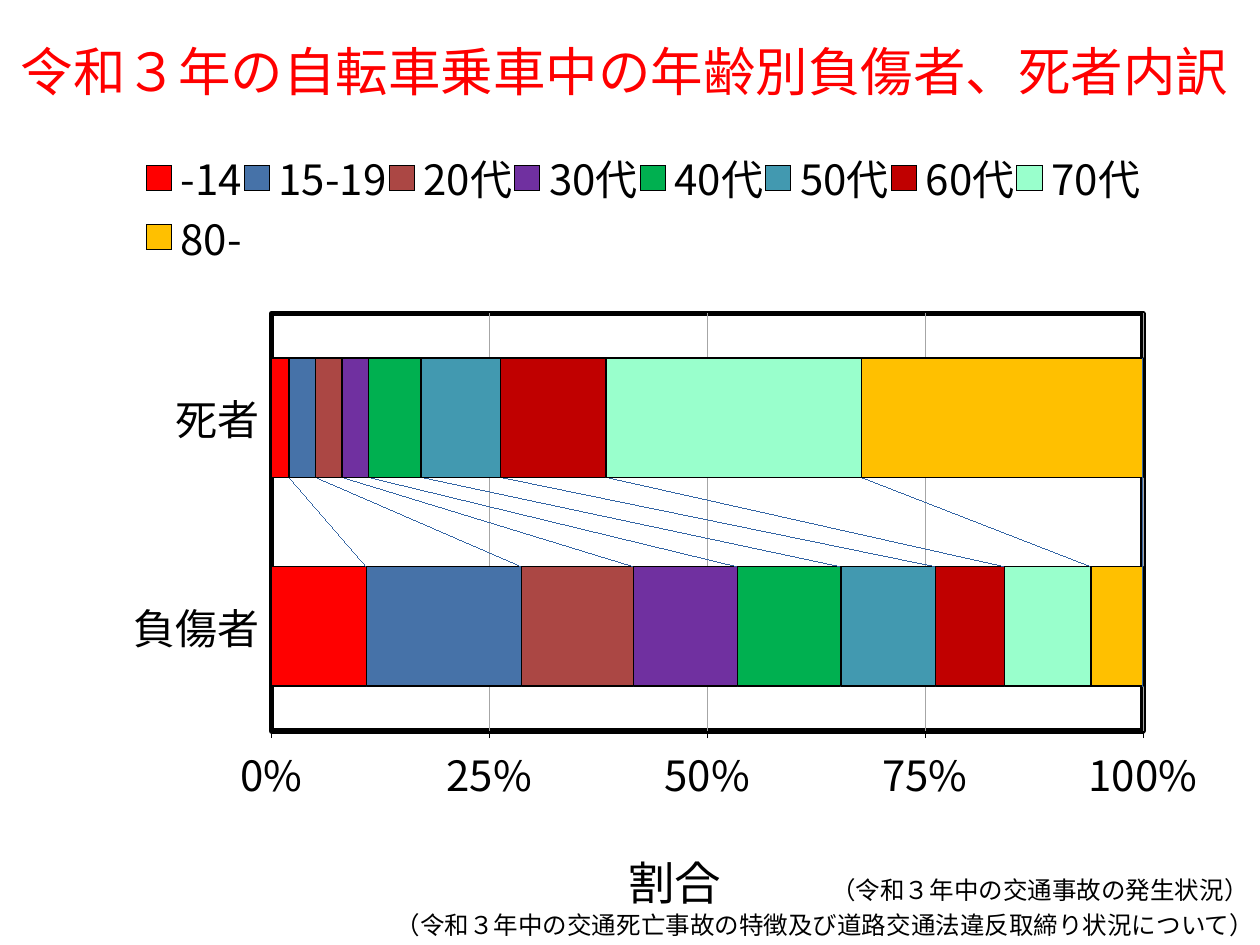
import pptx
import pptx.chart.data
import pptx.dml.color
import pptx.enum.chart
import pptx.enum.text
import pptx.oxml
import pptx.oxml.ns
import pptx.util
from dataclasses import dataclass
from lxml import etree

Pt = pptx.util.Pt
qn = pptx.oxml.ns.qn
NS = pptx.oxml.ns.nsdecls("c", "a")


@dataclass(frozen=True)
class Theme:
    font: str = "Noto Sans CJK JP"
    black: str = "000000"
    title: str = "FF0000"
    grid: str = "A6A6A6"
    link: str = "4672A8"
    title_size: float = 30
    axis_title_size: float = 26.6
    label_size: float = 24
    note_size: float = 14


CATEGORIES = ["負傷者", "死者"]
AGE_GROUPS = [
    ("-14", (11, 2), "FF0000"),
    ("15-19", (18, 3), "4672A8"),
    ("20代", (13, 3), "AB4744"),
    ("30代", (12, 3), "7030A0"),
    ("40代", (12, 6), "00B050"),
    ("50代", (11, 9), "4299B0"),
    ("60代", (8, 12), "C00000"),
    ("70代", (10, 29), "99FFCC"),
    ("80-", (6, 32), "FFC000"),
]


def rgb(color):
    return pptx.dml.color.RGBColor.from_string(color)


def set_font(font, name, size, color):
    font.name, font.size, font.bold = name, Pt(size), False
    font.color.rgb = rgb(color)
    etree.SubElement(font._rPr, qn("a:ea")).set("typeface", name)


def set_line(line, color, width):
    line.color.rgb = rgb(color)
    line.width = Pt(width)


def add_text(tf, text, *, font, size, color, align=None):
    p = tf.paragraphs[0]
    p.alignment = align
    r = p.add_run()
    r.text = text
    set_font(r.font, font, size, color)


def line_xml(color, width):
    return (f'<c:spPr><a:ln w="{Pt(width)}"><a:solidFill><a:srgbClr val="{color}"/>'
            '</a:solidFill></a:ln></c:spPr>')


def layout(x, y, w=None, h=None, inner=False):
    """Manual layout in fractions of the chart's size."""
    tags = [("layoutTarget", "inner")] if inner else []
    tags += [("xMode", "edge"), ("yMode", "edge"), ("x", x), ("y", y)]
    tags += [("w", w), ("h", h)] if w else []
    body = "".join(f'<c:{tag} val="{value}"/>' for tag, value in tags)
    return pptx.oxml.parse_xml(
        f"<c:layout {NS}><c:manualLayout>{body}</c:manualLayout></c:layout>")


def place(parent, new, after=None):
    """Put a layout in parent, first or just after the named child."""
    for old in parent.findall(qn("c:layout")):
        parent.remove(old)
    if after is None:
        parent.insert(0, new)
    else:
        parent.find(qn(after)).addnext(new)


class Deck:
    def __init__(self, theme):
        self.theme = theme
        self.prs = pptx.Presentation()
        self.prs.slide_width, self.prs.slide_height = Pt(720), Pt(540)
        self.s = None

    def add_slide(self):
        self.s = self.prs.slides.add_slide(self.prs.slide_layouts[6])

    def text(self, text, x, y, w, h, *, size, color, wrap=True, align=None):
        tf = self.s.shapes.add_textbox(Pt(x), Pt(y), Pt(w), Pt(h)).text_frame
        tf.word_wrap = wrap
        tf.vertical_anchor = pptx.enum.text.MSO_ANCHOR.MIDDLE
        add_text(tf, text, font=self.theme.font, size=size, color=color, align=align)

    def stacked_chart(self, x, y, w, h, categories, groups, axis_title):
        t = self.theme
        data = pptx.chart.data.CategoryChartData()
        data.categories = categories
        for name, values, _ in groups:
            data.add_series(name, values)
        chart = self.s.shapes.add_chart(
            pptx.enum.chart.XL_CHART_TYPE.BAR_STACKED_100,
            Pt(x), Pt(y), Pt(w), Pt(h), data).chart
        chart.has_title = False
        set_font(chart.font, t.font, t.label_size, t.black)

        # Bars
        plot = chart.plots[0]
        plot.gap_width, plot.overlap = 75, 100
        plot.vary_by_categories = False
        for series, (_, _, color) in zip(plot.series, groups):
            series.format.fill.solid()
            series.format.fill.fore_color.rgb = rgb(color)
            set_line(series.format.line, t.black, 0.75)

        # Axes
        tick = pptx.enum.chart.XL_TICK_MARK
        cat, val = chart.category_axis, chart.value_axis
        for axis, mark in ((cat, tick.NONE), (val, tick.OUTSIDE)):
            axis.major_tick_mark, axis.minor_tick_mark = mark, tick.NONE
            set_line(axis.format.line, t.black, 0.25)
            set_font(axis.tick_labels.font, t.font, t.label_size, t.black)
        cat.has_major_gridlines = False
        cat.tick_label_position = pptx.enum.chart.XL_TICK_LABEL_POSITION.LOW
        val.minimum_scale, val.maximum_scale, val.major_unit = 0, 1, 0.25
        val.tick_labels.number_format = "0%"
        val.tick_labels.number_format_is_linked = False
        val.has_major_gridlines = True
        set_line(val.major_gridlines.format.line, t.grid, 0.25)
        add_text(val.axis_title.text_frame, axis_title, font=t.font,
                 size=t.axis_title_size, color=t.black)
        place(val.axis_title._element, layout(0.49, 0.89), "c:tx")

        # Legend
        chart.has_legend = True
        chart.legend.position = pptx.enum.chart.XL_LEGEND_POSITION.TOP
        chart.legend.include_in_layout = False
        set_font(chart.legend.font, t.font, t.label_size, t.black)
        place(chart.legend._element, layout(0.08, 0.02, 0.86, 0.15), "c:legendPos")

        # Plot frame and the lines that join the bars
        area = chart._chartSpace.find(".//" + qn("c:plotArea"))
        place(area, layout(0.19, 0.23, 0.75, 0.53, inner=True))
        frame = pptx.oxml.parse_xml(line_xml(t.black, 3).replace(">", f" {NS}>", 1))
        area.append(frame)
        links = f"<c:serLines {NS}>{line_xml(t.link, 0.25)}</c:serLines>"
        area.find(".//" + qn("c:overlap")).addnext(pptx.oxml.parse_xml(links))

    def save(self):
        self.prs.save("out.pptx")


def main():
    theme = Theme()
    deck = Deck(theme)
    deck.add_slide()

    # Title
    deck.text("令和３年の自転車乗車中の年齢別負傷者、死者内訳", 0, 5, 714, 71,
              size=theme.title_size, color=theme.title,
              align=pptx.enum.text.PP_ALIGN.CENTER)

    # Share of each age group
    deck.stacked_chart(29, 75.5, 664, 454.5, CATEGORIES, AGE_GROUPS, "割合")

    # Sources
    for text, x, y, w in (
        ("（令和３年中の交通事故の発生状況）", 468, 496, 255),
        ("（令和３年中の交通死亡事故の特徴及び道路交通法違反取締り状況について）",
         219, 516, 509),
    ):
        deck.text(text, x, y, w, 24.5, size=theme.note_size, color=theme.black,
                  wrap=False)
    deck.save()


if __name__ == "__main__":
    main()
